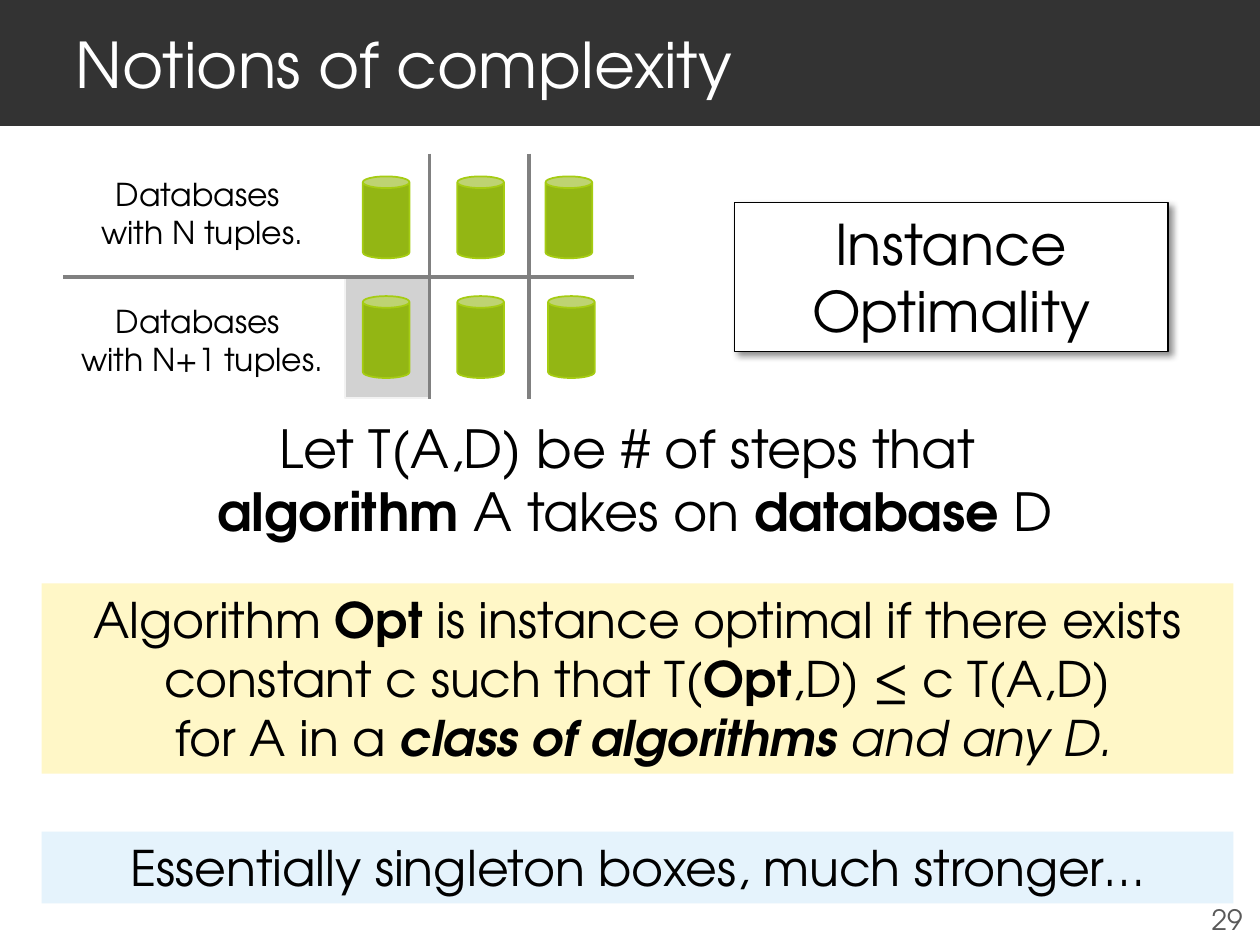
from lxml import etree
from pptx import Presentation
from pptx.dml.color import RGBColor
from pptx.enum.shapes import MSO_CONNECTOR, MSO_SHAPE
from pptx.enum.text import MSO_ANCHOR, MSO_AUTO_SIZE, PP_ALIGN
from pptx.oxml.ns import qn
from pptx.util import Inches, Pt

RECTANGLE, CAN = MSO_SHAPE.RECTANGLE, MSO_SHAPE.CAN
STRAIGHT = MSO_CONNECTOR.STRAIGHT
TOP, MIDDLE = MSO_ANCHOR.TOP, MSO_ANCHOR.MIDDLE
LEFT, CENTER = PP_ALIGN.LEFT, PP_ALIGN.CENTER
NO_AUTOFIT = MSO_AUTO_SIZE.NONE
TITLE_ONLY = 5

BOLD = {"bold": True}
ITALIC = {"italic": True}
BOLD_ITALIC = {"bold": True, "italic": True}


def color(value):
    return RGBColor.from_string(value)


def apply(target, values):
    for name, value in values.items():
        setattr(target, name, value)


class SlideBuilder:
    font = "TeX Gyre Adventor"
    ink = "000000"

    def __init__(self, deck):
        self.slide = deck.slides.add_slide(deck.slide_layouts[TITLE_ONLY])

    def place(self, shape, at):
        names = ("left", "top", "width", "height")
        apply(shape, dict(zip(names, map(Inches, at))))

    def fill_text(self, shape, paragraphs, size, ink=None, align=CENTER,
                  anchor=TOP, margin_left=0.1, margin_right=0.1):
        """Each paragraph is a list of (text, format) spans."""
        frame = shape.text_frame
        apply(frame, {"word_wrap": True, "auto_size": NO_AUTOFIT,
                      "vertical_anchor": anchor,
                      "margin_left": Inches(margin_left),
                      "margin_right": Inches(margin_right),
                      "margin_top": Inches(0.05),
                      "margin_bottom": Inches(0.05)})
        for index, spans in enumerate(paragraphs):
            para = frame.add_paragraph() if index else frame.paragraphs[0]
            para.alignment = align
            for text, style in spans:
                span = para.add_run()
                span.text = text
                apply(span.font, {"name": self.font, "size": Pt(size), **style})
                span.font.color.rgb = color(ink or self.ink)

    def title(self, text, at, fill):
        box = self.slide.shapes.title
        self.place(box, at)
        box.fill.solid()
        box.fill.fore_color.rgb = color(fill)
        self.fill_text(box, [[(text, {})]], 36, "FFFFFF", LEFT, MIDDLE, 0.6, 0.3)

    def text(self, at, paragraphs, size, **style):
        box = self.slide.shapes.add_textbox(*map(Inches, at))
        self.fill_text(box, paragraphs, size, **style)

    def shape(self, kind, at, fill, line=None, width=1.0):
        shape = self.slide.shapes.add_shape(kind, *map(Inches, at))
        shape.shadow.inherit = False
        shape.fill.solid()
        shape.fill.fore_color.rgb = color(fill)
        if line:
            shape.line.color.rgb = color(line)
            shape.line.width = Pt(width)
        else:
            shape.line.fill.background()
        return shape

    def panel(self, at, fill, paragraphs, size, **outline):
        panel = self.shape(RECTANGLE, at, fill, **outline)
        self.fill_text(panel, paragraphs, size)
        return panel

    def fade(self, shape, percent):
        tint = shape._element.spPr.find(qn("a:solidFill"))[0]
        etree.SubElement(tint, qn("a:alpha"), val=str(percent * 1000))

    def drop_shadow(self, shape, percent, blur, distance, angle):
        effects = shape._element.spPr.find(qn("a:effectLst"))
        shadow = etree.SubElement(
            effects, qn("a:outerShdw"), blurRad=str(Pt(blur)),
            dist=str(Pt(distance)), dir=str(angle * 60000),
            algn="tl", rotWithShape="0")
        tint = etree.SubElement(shadow, qn("a:srgbClr"), val=self.ink)
        etree.SubElement(tint, qn("a:alpha"), val=str(percent * 1000))

    def line(self, start, end):
        line = self.slide.shapes.add_connector(
            STRAIGHT, *map(Inches, start + end))
        line.line.color.rgb = color("808080")
        line.line.width = Pt(2)
        etree.SubElement(line._element.spPr, qn("a:effectLst"))


def main():
    deck = Presentation()
    deck.slide_width, deck.slide_height = Inches(10), Inches(7.5)
    page = SlideBuilder(deck)

    # Title band and page number
    page.title("Notions of complexity", (0, 0, 10, 1), "333333")
    page.text((9.49, 7.1, 0.5, 0.4), [[("29", {})]], 16,
              ink="595959", anchor=MIDDLE)

    # Highlighted single cell of the database grid
    cell = page.shape(RECTANGLE, (2.74, 2.2, 0.67, 0.96), "BFBFBF", "F2F2F2")
    page.fade(cell, 70)

    # Database grid: one labelled row per database size
    rows = [(1.4, 1.34, "with N tuples.", (2.88, 3.63, 4.33)),
            (2.35, 2.35, "with N+1 tuples.", (2.88, 3.63, 4.35))]
    for can_top, label_top, label, can_lefts in rows:
        for left in can_lefts:
            page.shape(CAN, (left, can_top, 0.37, 0.65), "93B614", "A5CC12")
        page.text((0.33, label_top, 2.55, 0.71),
                  [[("Databases ", {})], [(label, {})]], 18)

    # Grid rules
    page.line((0.5, 2.2), (5.03, 2.2))
    for x in (3.41, 4.2):
        page.line((x, 1.22), (x, 3.17))

    # Name of the notion
    notion = page.panel((5.83, 1.61, 3.44, 1.18), "FFFFFF",
                        [[("Instance Optimality", {})]], 32,
                        line="000000", width=0.75)
    page.drop_shadow(notion, 43, 4, 3, 45)

    # Cost measure
    page.text((0.29, 3.25, 9.5, 1.11), [
        [("Let T(A,D) be # of steps that ", {})],
        [("algorithm", BOLD), (" A takes on ", {}),
         ("database", BOLD), (" D", {})],
    ], 30)

    # Definition and remark
    page.panel((0.33, 4.63, 9.46, 1.51), "FFF7C7", [
        [("Algorithm ", {}), ("Opt", BOLD),
         (" is instance optimal if there exists constant c such that T(", {}),
         ("Opt", BOLD), (",D) ≤ c T(A,D)", {})],
        [(" for A in a ", {}), ("class of algorithms ", BOLD_ITALIC),
         ("and any D.", ITALIC)],
    ], 28)
    page.panel((0.33, 6.6, 9.46, 0.57), "E5F3FC",
               [[("Essentially singleton boxes, much stronger…", {})]], 28)

    deck.save("out.pptx")


if __name__ == "__main__":
    main()
